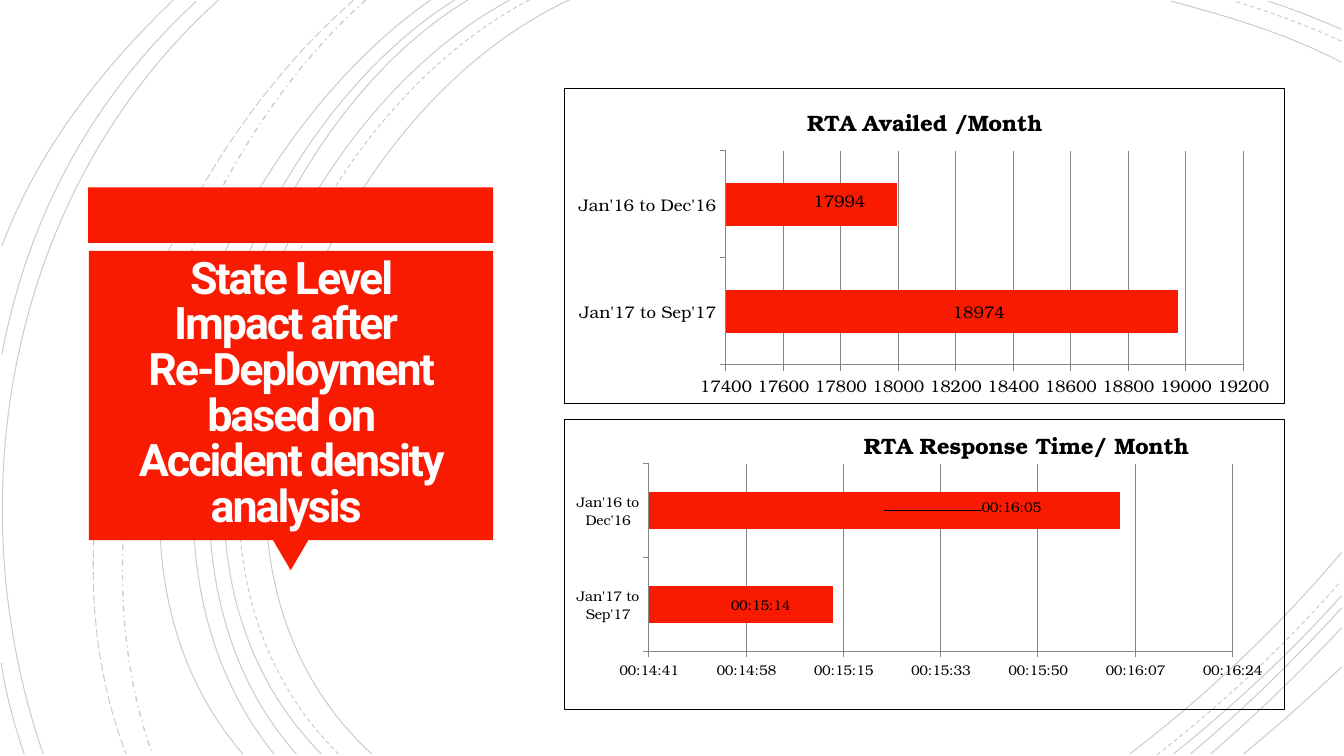
from dataclasses import dataclass
from typing import Any, NamedTuple

from lxml.etree import SubElement
from pptx import Presentation
from pptx.chart.data import CategoryChartData
from pptx.dml.color import RGBColor
from pptx.enum.chart import XL_CHART_TYPE as ChartType, XL_LABEL_POSITION as LabelPosition
from pptx.enum.chart import XL_TICK_MARK as TickMark
from pptx.enum.dml import MSO_LINE_DASH_STYLE as Dash
from pptx.enum.shapes import MSO_SHAPE as Preset
from pptx.enum.text import MSO_ANCHOR as Anchor, MSO_AUTO_SIZE as AutoSize, PP_ALIGN as Align
from pptx.oxml import parse_xml
from pptx.oxml.ns import nsdecls, qn
from pptx.util import Cm, Pt


@dataclass(frozen=True)
class Theme:
    accent: RGBColor = RGBColor(0xF8, 0x1B, 0x02)
    ink: RGBColor = RGBColor(0, 0, 0)
    title_ink: RGBColor = RGBColor(0xFF, 0xFE, 0xFF)
    grid: RGBColor = RGBColor(0x86, 0x86, 0x86)
    title_font: str = "Roboto"
    chart_font: str = "TeX Gyre Bonum"
    title_size: int = 32
    chart_title_size: int = 16


class Arc(NamedTuple):
    """A cubic curve: start, two control points and end, in cm."""
    points: tuple[tuple[float, float], ...]
    dash: Any = Dash.SOLID
    width: float = 0.75


class Block(NamedTuple):
    preset: Any
    box: tuple[float, float, float, float]
    rotation: int = 0


@dataclass(frozen=True)
class BarChart:
    """Box in cm; plot, title and label places in percent of the chart."""
    title: str
    box: tuple[float, float, float, float]
    values: tuple[float, ...]
    number_format: str
    size: int
    scale: tuple[float, float, float]
    plot: tuple[float, float, float, float]
    title_at: tuple[float, float]
    label_shifts: tuple[tuple[float, float], ...]


THEME = Theme()
PERIODS = ("Jan'17 to Sep'17", "Jan'16 to Dec'16")

ARCS = (
    Arc(((14.35, 0), (8, 2.92), (3.63, 13.72), (9.37, 19))),
    Arc(((33.81, 1.57), (32.46, 0.86), (30.94, 0.41), (29.51, 0.03))),
    Arc(((28.47, 19), (30.4, 17.53), (32.23, 15.8), (33.81, 13.92))),
    Arc(((13.34, 0), (7.24, 3.18), (3.12, 13.64), (8.53, 19)), Dash.DASH),
    Arc(((33.81, 1.04), (32.94, 0.64), (32, 0.3), (31.12, 0.03)), Dash.DASH),
    Arc(((29.16, 19.02), (30.81, 17.73), (32.39, 16.26), (33.78, 14.66)), Dash.DASH),
    Arc(((12.85, 0), (6.86, 3.23), (2.79, 13.64), (8.1, 19))),
    Arc(((33.81, 0.74), (33.2, 0.48), (32.59, 0.23), (31.95, 0.03))),
    Arc(((29.57, 19), (31.06, 17.81), (32.51, 16.46), (33.81, 15.01))),
    Arc(((11.79, 0), (6.2, 3.38), (2.79, 13.74), (7.47, 19))),
    Arc(((30, 19), (31.34, 17.88), (32.61, 16.64), (33.81, 15.32))),
    Arc(((11.46, 0), (5.87, 3.51), (2.46, 13.54), (6.91, 19))),
    Arc(((30.51, 19), (31.65, 18.01), (32.77, 16.94), (33.81, 15.82))),
    Arc(((10.85, 0), (5.51, 3.73), (1.35, 13.44), (6.12, 19))),
    Arc(((31.34, 19), (32.18, 18.31), (33, 17.58), (33.81, 16.81))),
    Arc(((9.22, 0), (4.47, 4.22), (1.65, 12.93), (3.84, 19)), Dash.DASH_DOT, 1),
    Arc(((8.92, 0), (3.99, 4.29), (0.74, 12.67), (3.18, 19)), Dash.LONG_DASH),
    Arc(((5.51, 0), (0.28, 4.7), (-1.17, 12.45), (1.09, 19))),
    Arc(((4.95, 0.03), (2.34, 2.44), (0.71, 5.44), (0.05, 8.92))),
    Arc(((0.03, 16.71), (0.15, 17.5), (0.36, 18.26), (0.61, 19))),
    Arc(((4.37, 0), (2.54, 1.75), (0.94, 3.81), (0.05, 6.2))),
)

BLOCKS = (
    Block(Preset.RECTANGLE, (2.22, 4.72, 10.21, 1.4)),
    Block(Preset.ISOSCELES_TRIANGLE, (6.88, 13.61, 0.89, 0.76), 180),
    Block(Preset.RECTANGLE, (2.24, 6.32, 10.19, 7.29)),
)

CHARTS = (
    BarChart("RTA Availed /Month", (14.22, 2.22, 18.16, 7.96), (18974, 17994), "General", 12,
             (17400, 19200, 200), (22.4, 19.8, 71.9, 67.9), (33.1, 3.5),
             ((3.7, 0), (3.9, -1.3))),
    BarChart("RTA Response Time/ Month", (14.22, 10.56, 18.16, 7.34), (0.010579, 0.011169),
             "hh:mm:ss", 10, (0.0102, 0.0114, 0.0002), (11.7, 15.2, 81.1, 64.7), (41, 1.1),
             ((2.7, 0), (17.6, -1.5))),
)


def apply_format(target: Any, **values: Any) -> None:
    for name, value in values.items():
        setattr(target, name, value)


def draw_arc(slide: Any, arc: Arc) -> None:
    start, *others = [(Cm(x), Cm(y)) for x, y in arc.points]
    builder = slide.shapes.build_freeform(*start, scale=1.0)
    builder.add_line_segments(others, close=False)
    shape = builder.convert_to_shape()
    # Join the three segments into one Bezier curve
    segments = list(shape.element.iter(qn("a:lnTo")))
    curve = SubElement(segments[0].getparent(), qn("a:cubicBezTo"))
    for segment in segments:
        curve.append(segment[0])
        segment.getparent().remove(segment)
    shape.shadow.inherit = False
    shape.fill.background()
    shape.line.color.rgb = THEME.ink
    apply_format(shape.line, width=Pt(arc.width), dash_style=arc.dash)
    color = next(shape.element.iter(qn("a:srgbClr")))
    SubElement(color, qn("a:alpha"), val="20000")


def draw_block(slide: Any, block: Block) -> None:
    shape = slide.shapes.add_shape(block.preset, *map(Cm, block.box))
    shape.rotation = block.rotation
    shape.shadow.inherit = False
    shape.fill.solid()
    shape.fill.fore_color.rgb = THEME.accent
    shape.line.fill.background()


def write_title(slide: Any) -> None:
    title = slide.shapes.title
    title.element.getparent().append(title.element)  # in front of the red panel
    apply_format(title, left=Cm(2.46), top=Cm(6.53), width=Cm(9.73), height=Cm(6.83))
    frame = title.text_frame
    sides = ("margin_left", "margin_top", "margin_right", "margin_bottom")
    apply_format(frame, word_wrap=True, auto_size=AutoSize.NONE, vertical_anchor=Anchor.MIDDLE,
                 **dict.fromkeys(sides, Cm(0.64)))
    frame.text = "State Level Impact after \vRe-Deployment based on Accident density analysis "
    paragraph = frame.paragraphs[0]
    apply_format(paragraph, alignment=Align.CENTER, line_spacing=0.85)
    for run in paragraph.runs:
        apply_format(run.font, name=THEME.title_font, size=Pt(THEME.title_size), bold=True)
        run.font.color.rgb = THEME.title_ink
    for properties in title.element.iter(qn("a:rPr")):
        properties.set("spc", "-150")


def place(parent: Any, index: int, *percents: float, edge: bool = True, inner: bool = False) -> None:
    """Give a chart part a manual layout of x, y and, if present, width and height."""
    for old in parent.findall(qn("c:layout")):
        parent.remove(old)
    layout = parse_xml(f"<c:layout {nsdecls('c')}><c:manualLayout/></c:layout>")
    settings = [("layoutTarget", "inner")] if inner else []
    settings += [("xMode", "edge"), ("yMode", "edge")] if edge else []
    settings += [(name, round(percent / 100, 3)) for name, percent in zip("xywh", percents)]
    for name, value in settings:
        SubElement(layout[0], qn(f"c:{name}"), val=str(value))
    parent.insert(index, layout)


def hide_leader_lines(labels: Any) -> None:
    for old in labels.findall(qn("c:showLeaderLines")):
        labels.remove(old)
    labels.append(parse_xml(
        f'<c:extLst {nsdecls("c")}><c:ext uri="{{CE6537A1-D6FC-4f65-9D91-7224C49458BB}}" '
        'xmlns:c15="http://schemas.microsoft.com/office/drawing/2012/chart">'
        '<c15:showLeaderLines val="0"/></c:ext></c:extLst>'))


def draw_chart(slide: Any, design: BarChart) -> None:
    data = CategoryChartData(number_format=design.number_format)
    data.categories = PERIODS
    data.add_series("Series 1", design.values)
    chart = slide.shapes.add_chart(ChartType.BAR_CLUSTERED, *map(Cm, design.box), data).chart
    apply_format(chart, has_legend=False, has_title=True)
    apply_format(chart.font, name=THEME.chart_font, size=Pt(design.size))
    chart.font.color.rgb = THEME.ink

    # Title
    chart.chart_title.text_frame.text = design.title
    font = chart.chart_title.text_frame.paragraphs[0].runs[0].font
    apply_format(font, name=THEME.chart_font, size=Pt(THEME.chart_title_size), bold=True)
    font.color.rgb = THEME.ink
    place(chart.chart_title.element, 1, *design.title_at)

    # Axes and grid
    value_axis, category_axis = chart.value_axis, chart.category_axis
    low, high, unit = design.scale
    apply_format(value_axis, minimum_scale=low, maximum_scale=high, major_unit=unit,
                 has_major_gridlines=True)
    apply_format(value_axis.tick_labels, number_format=design.number_format,
                 number_format_is_linked=False)
    for axis in (value_axis, category_axis):
        apply_format(axis, major_tick_mark=TickMark.OUTSIDE, minor_tick_mark=TickMark.NONE)
    for part in (value_axis, category_axis, value_axis.major_gridlines):
        part.format.line.color.rgb = THEME.grid
        part.format.line.width = Pt(0.75)
    place(chart.element.find(f".//{qn('c:plotArea')}"), 0, *design.plot, inner=True)

    # Bars and their labels
    plot = chart.plots[0]
    apply_format(plot, gap_width=150, vary_by_categories=False)
    series = plot.series[0]
    series.format.fill.solid()
    series.format.fill.fore_color.rgb = THEME.accent
    for index in range(len(PERIODS)):
        label = series.points[index].data_label
        label.position = LabelPosition.CENTER
        label.font.size = Pt(design.size)
    for element, shift in zip(chart.element.iter(qn("c:dLbl")), design.label_shifts):
        place(element, 1, *shift, edge=False)
    hide_leader_lines(chart.element.find(f".//{qn('c:dLbls')}"))

    # Square, unfilled frame
    chart.element.find(qn("c:date1904")).addnext(
        parse_xml(f'<c:roundedCorners {nsdecls("c")} val="0"/>'))
    chart.element.find(qn("c:chart")).addnext(parse_xml(
        f'<c:spPr {nsdecls("c", "a")}><a:noFill/><a:ln w="{Pt(0.75)}"><a:solidFill>'
        f'<a:srgbClr val="{THEME.ink}"/></a:solidFill></a:ln></c:spPr>'))


def main() -> None:
    presentation = Presentation()
    apply_format(presentation, slide_width=Cm(33.87), slide_height=Cm(19.05))
    slide = presentation.slides.add_slide(presentation.slide_layouts[5])
    for arc in ARCS:
        draw_arc(slide, arc)
    for block in BLOCKS:
        draw_block(slide, block)
    write_title(slide)
    for bar_chart in CHARTS:
        draw_chart(slide, bar_chart)
    presentation.save("out.pptx")


if __name__ == "__main__":
    main()
